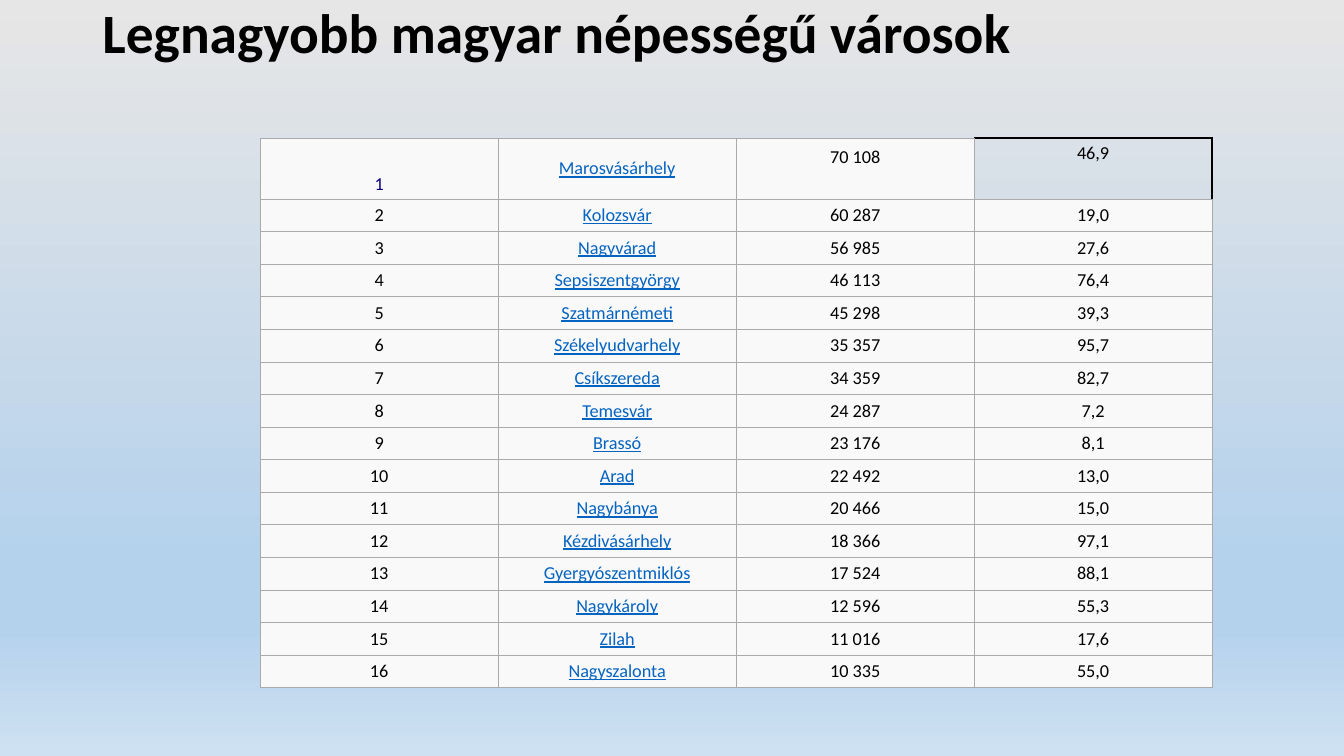
from lxml.etree import SubElement
from pptx import Presentation
from pptx.dml.color import RGBColor
from pptx.enum.text import MSO_ANCHOR, MSO_AUTO_SIZE, PP_ALIGN
from pptx.oxml.ns import qn
from pptx.util import Pt

# Content: rank, city, Hungarian population, percentage
TITLE = "Legnagyobb magyar népességű városok\v"
CITIES = [
    ("\v1", "Marosvásárhely", "70 108", "46,9"),
    ("2", "Kolozsvár", "60 287", "19,0"),
    ("3", "Nagyvárad", "56 985", "27,6"),
    ("4", "Sepsiszentgyörgy", "46 113", "76,4"),
    ("5", "Szatmárnémeti", "45 298", "39,3"),
    ("6", "Székelyudvarhely", "35 357", "95,7"),
    ("7", "Csíkszereda", "34 359", "82,7"),
    ("8", "Temesvár", "24 287", "7,2"),
    ("9", "Brassó", "23 176", "8,1"),
    ("10", "Arad", "22 492", "13,0"),
    ("11", "Nagybánya", "20 466", "15,0"),
    ("12", "Kézdivásárhely", "18 366", "97,1"),
    ("13", "Gyergyószentmiklós", "17 524", "88,1"),
    ("14", "Nagykároly", "12 596", "55,3"),
    ("15", "Zilah", "11 016", "17,6"),
    ("16", "Nagyszalonta", "10 335", "55,0"),
]

# Colours
BLACK = RGBColor(0x00, 0x00, 0x00)
LINK_BLUE = RGBColor(0x05, 0x63, 0xC1)
NAVY = RGBColor(0x0B, 0x00, 0x80)
CELL_FILL = RGBColor(0xF9, 0xF9, 0xF9)
GRID = RGBColor(0xAA, 0xAA, 0xAA)
BACKGROUND = [
    (0, RGBColor(0xE7, 0xE6, 0xE6)),
    (74, RGBColor(0xB5, 0xD2, 0xEC)),
    (83, RGBColor(0xB5, 0xD2, 0xEC)),
    (100, RGBColor(0xCE, 0xE1, 0xF2)),
]

# Table layout in points
TABLE_LEFT, TABLE_TOP = 185.8, 98.6
COL_WIDTH, FIRST_ROW, ROW_HEIGHT = 170, 41, 23.3
RANK, CITY, POPULATION, SHARE = range(4)


def write(tf, text, size=13, color=BLACK, bold=False, underline=False,
          align=PP_ALIGN.CENTER, spacing=None):
    p = tf.paragraphs[0]
    p.text = text
    p.alignment = align
    p.line_spacing = spacing
    for r in p.runs:
        r.font.name = "Calibri"
        r.font.size = Pt(size)
        r.font.bold = bold
        r.font.underline = underline
        r.font.color.rgb = color


def set_borders(cell, **sides):
    """Draw the cell's edges; each side is a (colour, width) pair."""
    tc_pr = cell._tc.get_or_add_tcPr()
    for i, side in enumerate(("lnL", "lnR", "lnT", "lnB")):
        color, width = sides.get(side, (GRID, 0.75))
        ln = tc_pr.makeelement(qn(f"a:{side}"), {"w": str(Pt(width))})
        tc_pr.insert(i, ln)
        solid = SubElement(ln, qn("a:solidFill"))
        SubElement(solid, qn("a:srgbClr"), val=str(color))


prs = Presentation()
prs.slide_width, prs.slide_height = Pt(960), Pt(540)
s = prs.slides.add_slide(prs.slide_layouts[5])

# Background gradient
fill = s.background.fill
fill.gradient()
fill.gradient_angle = 270
stops = s._element.find(".//" + qn("a:gsLst"))
for stop in list(stops):
    stops.remove(stop)
for position, color in BACKGROUND:
    stop = SubElement(stops, qn("a:gs"), pos=str(position * 1000))
    SubElement(stop, qn("a:srgbClr"), val=str(color))

# Title
title = s.shapes.title
title.left, title.top, title.width, title.height = Pt(66), Pt(28.8), Pt(828), Pt(45.4)
title.text_frame.auto_size = MSO_AUTO_SIZE.NONE
title.text_frame.vertical_anchor = MSO_ANCHOR.MIDDLE
write(title.text_frame, TITLE, size=39.6, bold=True, align=PP_ALIGN.LEFT, spacing=0.9)

# Table of cities
row_heights = [FIRST_ROW] + [ROW_HEIGHT] * (len(CITIES) - 1)
table = s.shapes.add_table(len(CITIES), 4, Pt(TABLE_LEFT), Pt(TABLE_TOP),
                           Pt(4 * COL_WIDTH), Pt(sum(row_heights))).table
table.first_row = table.horz_banding = False
for column in table.columns:
    column.width = Pt(COL_WIDTH)
for row, height in zip(table.rows, row_heights):
    row.height = Pt(height)

for i, city in enumerate(CITIES):
    for j, text in enumerate(city):
        cell = table.cell(i, j)
        cell.margin_left = cell.margin_right = Pt(5)
        cell.margin_top = cell.margin_bottom = Pt(2.9)
        cell.vertical_anchor = MSO_ANCHOR.MIDDLE
        cell.fill.solid()
        cell.fill.fore_color.rgb = CELL_FILL
        write(cell.text_frame, text, color=LINK_BLUE if j == CITY else BLACK,
              underline=j == CITY)
        if (i, j) != (0, SHARE):
            set_borders(cell)

# The first row has its own look
table.cell(0, RANK).text_frame.paragraphs[0].runs[0].font.color.rgb = NAVY
table.cell(0, POPULATION).margin_bottom = Pt(18.9)
first_share = table.cell(0, SHARE)
first_share.vertical_anchor = MSO_ANCHOR.TOP
first_share.fill.background()
set_borders(first_share, lnR=(BLACK, 1), lnT=(BLACK, 1.5))

prs.save("out.pptx")
